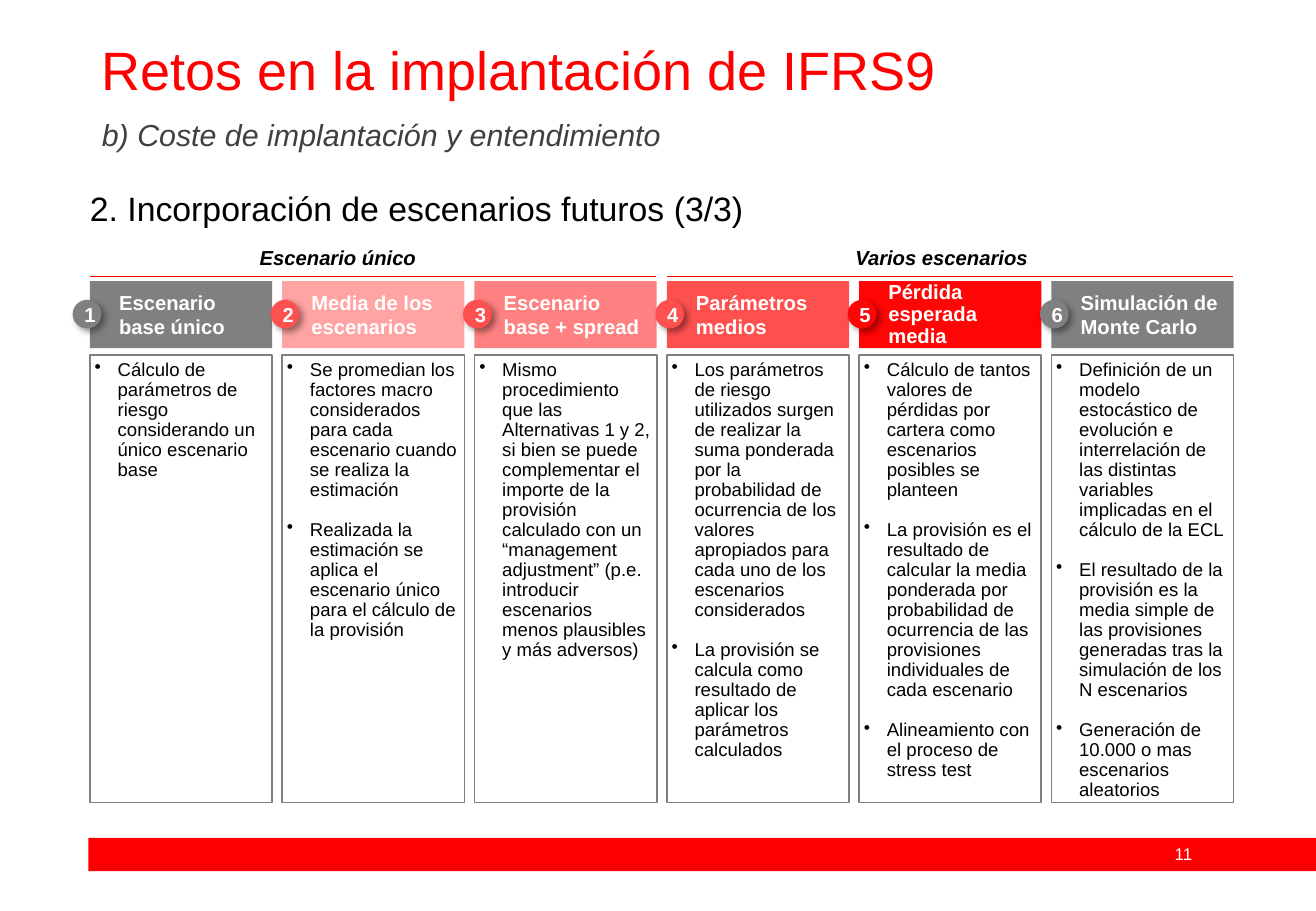
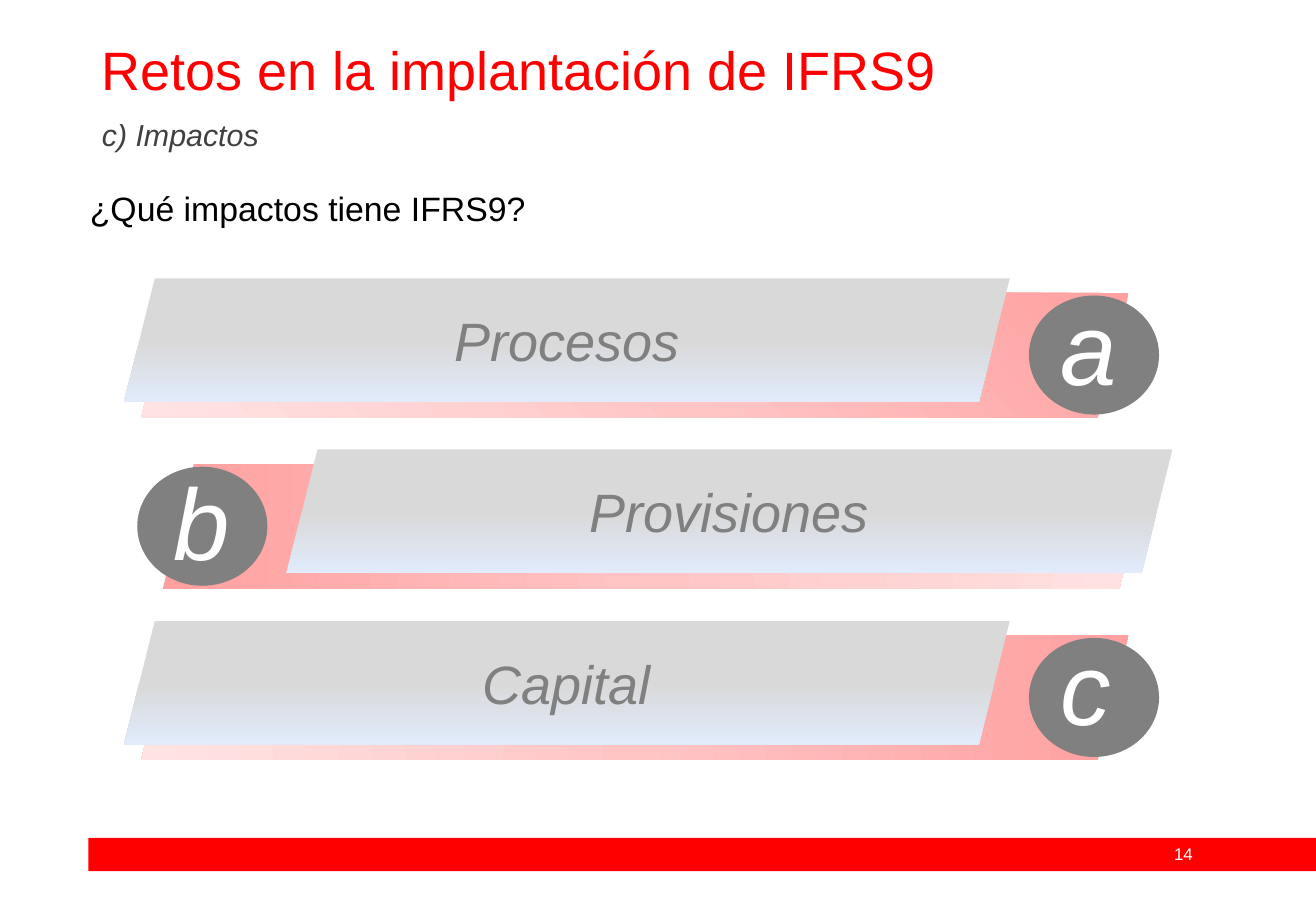
import collections

import pptx
import pptx.dml.color
import pptx.enum.shapes
import pptx.enum.text
import pptx.oxml
import pptx.oxml.ns
import pptx.util

Cm = pptx.util.Cm
Pt = pptx.util.Pt
SHAPE = pptx.enum.shapes.MSO_SHAPE
ALIGN = pptx.enum.text.PP_ALIGN
ANCHOR = pptx.enum.text.MSO_ANCHOR
Box = collections.namedtuple("Box", "left top width height")

COLOURS = {
    "red": "FF0000", "deep": "FF0505", "coral": "FF5050", "salmon": "FF8181",
    "rose": "FFA3A3", "grey": "808080", "charcoal": "404040",
    "black": "000000", "white": "FFFFFF",
    "ribbon_dark": "FFA0A0", "ribbon_mid": "FFC5C5", "ribbon_light": "FFE3E3",
    "silver": "D9D9D9", "ice": "E1EBFB",
}
RIBBON = ("ribbon_dark", "ribbon_mid", "ribbon_light")
PANEL = ("silver", "silver", "ice")

TIGHT = {"margin_left": Cm(0.1), "margin_right": Cm(0.1),
         "margin_top": Cm(0.1), "margin_bottom": Cm(0.1)}
MIDDLE = {"vertical_anchor": ANCHOR.MIDDLE}
CENTRED = {"alignment": ALIGN.CENTER}
STYLES = {
    "title": {"colour": "red", "font": {"size": Pt(32)}, "para": {"line_spacing": 0.9}},
    "subtitle": {"colour": "charcoal", "font": {"size": Pt(18), "italic": True},
                 "para": {"line_spacing": 0.9}},
    "heading": {"colour": "black", "font": {"size": Pt(20)}},
    "number": {"colour": "white", "font": {"size": Pt(10)}, "para": CENTRED},
    "group": {"colour": "black", "font": {"size": Pt(12), "bold": True, "italic": True},
              "para": CENTRED, "frame": {"margin_right": 0}},
    "header": {"colour": "white", "font": {"size": Pt(12), "bold": True},
               "frame": {**TIGHT, **MIDDLE}, "indent": (0.51, 0)},
    "badge": {"colour": "white", "font": {"size": Pt(12), "bold": True}, "para": CENTRED,
              "frame": {**MIDDLE, "margin_left": Cm(0.13), "margin_right": 0,
                        "margin_top": 0, "margin_bottom": 0}},
    "body": {"colour": "black", "font": {"size": Pt(11)}, "frame": TIGHT,
             "para": {"line_spacing": 0.9, "space_after": Pt(11.9)},
             "indent": (0.48, -0.48), "bullet": "•"},
    "panel": {"colour": "grey", "font": {"size": Pt(32), "italic": True},
              "para": CENTRED, "frame": MIDDLE},
    "letter": {"colour": "white", "font": {"size": Pt(60), "italic": True}},
}
STYLES["dense_header"] = {**STYLES["header"], "para": {"line_spacing": 0.9}}

COLUMN_PITCH = 4.02
CARD_WIDTH = 3.81
CARDS = [
    ("grey", "grey", "header", ["Escenario", "base único"],
     ["Cálculo de parámetros de riesgo considerando un único escenario base"]),
    ("rose", "coral", "header", ["Media de los escenarios"],
     ["Se promedian los factores macro considerados para cada escenario cuando se "
      "realiza la estimación",
      "Realizada la estimación se aplica el escenario único para el cálculo de la "
      "provisión"]),
    ("salmon", "coral", "header", ["Escenario", "base + spread"],
     ["Mismo procedimiento que las Alternativas 1 y 2, si bien se puede complementar "
      "el importe de la provisión calculado con un “management adjustment” (p.e. "
      "introducir escenarios menos plausibles y más adversos)"]),
    ("coral", "coral", "header", ["Parámetros medios"],
     ["Los parámetros de riesgo utilizados surgen de realizar la suma ponderada por la "
      "probabilidad de ocurrencia de los valores apropiados para cada uno de los "
      "escenarios considerados",
      "La provisión se calcula como resultado de aplicar los parámetros calculados"]),
    ("deep", "deep", "dense_header", ["Pérdida esperada media"],
     ["Cálculo de tantos valores de pérdidas por cartera como escenarios posibles se "
      "planteen",
      "La provisión es el resultado de calcular la media ponderada por probabilidad de "
      "ocurrencia de las provisiones individuales de cada escenario",
      "Alineamiento con el proceso de stress test"]),
    ("grey", "grey", "header", ["Simulación de Monte Carlo"],
     ["Definición de un modelo estocástico de evolución e interrelación de las distintas "
      "variables implicadas en el cálculo de la ECL",
      "El resultado de la provisión es la media simple de las provisiones generadas tras "
      "la simulación de los N escenarios",
      "Generación de 10.000 o mas escenarios aleatorios"]),
]


def rgb(name):
    """Return the named colour."""
    return pptx.dml.color.RGBColor.from_string(COLOURS[name])


def apply(target, values):
    """Set each attribute of the target from a dict."""
    for name, value in values.items():
        setattr(target, name, value)


def lengths(box):
    """Turn a box in centimetres into four lengths."""
    return [Cm(value) for value in box]


def xml(text):
    """Parse a DrawingML fragment."""
    return pptx.oxml.parse_xml(text.replace(" ", f" {pptx.oxml.ns.nsdecls('a')} ", 1))


def write(shape, lines, style_name):
    """Fill a shape with paragraphs in one style."""
    style = STYLES[style_name]
    frame = shape.text_frame
    apply(frame, {"word_wrap": True, "vertical_anchor": ANCHOR.TOP, **style.get("frame", {})})
    for index, line in enumerate(lines):
        para = frame.paragraphs[0] if index == 0 else frame.add_paragraph()
        apply(para, {"alignment": ALIGN.LEFT, **style.get("para", {})})
        properties = para._p.get_or_add_pPr()
        if "indent" in style:
            for key, value in zip(("marL", "indent"), style["indent"]):
                properties.set(key, str(int(Cm(value))))
        if "bullet" in style:
            properties.append(xml(f'<a:buChar char="{style["bullet"]}"/>'))
        span = para.add_run()
        span.text = line
        apply(span.font, {"name": "Arial", **style["font"]})
        span.font.color.rgb = rgb(style["colour"])


def add_text(shapes, box, text, style_name):
    """Add a text box with one paragraph."""
    write(shapes.add_textbox(*lengths(box)), [text], style_name)


def add_block(shapes, kind, box, fill=None, line=None):
    """Add a preset shape with a flat fill and an optional outline."""
    shape = shapes.add_shape(kind, *lengths(box))
    shape.shadow.inherit = False
    if fill:
        shape.fill.solid()
        shape.fill.fore_color.rgb = rgb(fill)
    if line:
        shape.line.color.rgb = rgb(line)
        shape.line.width = Pt(1)
    else:
        shape.line.fill.background()
    return shape


def add_gradient_block(shapes, box, colours, angle):
    """Add a parallelogram with an evenly stepped gradient."""
    shape = add_block(shapes, SHAPE.PARALLELOGRAM, box)
    shape.fill.background()
    step = 100000 // (len(colours) - 1)
    stops = "".join(f'<a:gs pos="{index * step}"><a:srgbClr val="{COLOURS[name]}"/></a:gs>'
                    for index, name in enumerate(colours))
    gradient = xml(f'<a:gradFill rotWithShape="1"><a:gsLst>{stops}</a:gsLst>'
                   f'<a:lin ang="{angle * 60000}" scaled="0"/></a:gradFill>')
    properties = shape._element.spPr
    properties.replace(properties.find(pptx.oxml.ns.qn("a:noFill")), gradient)
    return shape


def add_shadow(shape):
    """Give a shape a soft shadow to the lower right."""
    effects = shape._element.spPr.find(pptx.oxml.ns.qn("a:effectLst"))
    effects.append(xml(
        f'<a:outerShdw blurRad="{Pt(4)}" dist="{Pt(3)}" dir="2700000" algn="tl" '
        f'rotWithShape="0"><a:srgbClr val="{COLOURS["black"]}"><a:alpha val="40000"/>'
        '</a:srgbClr></a:outerShdw>'))


def add_page(deck, subtitle, heading, number):
    """Add a page with its titles and footer band."""
    page = deck.slides.add_slide(deck.slide_layouts[6])
    add_block(page.shapes, SHAPE.RECTANGLE, Box(1.85, 17.52, 25.66, 0.7), "red")
    for box, text, style_name in (
            (Box(23.98, 17.52, 1.52, 0.69), number, "number"),
            (Box(1.88, 0.79, 23.72, 1.45), "Retos en la implantación de IFRS9", "title"),
            (Box(1.88, 2.39, 23.72, 1.04), subtitle, "subtitle"),
            (Box(1.63, 3.81, 23.72, 1.12), heading, "heading")):
        add_text(page.shapes, box, text, style_name)
    return page


def add_group_label(page, box, text, label_shift):
    """Add a label above the rule that spans a group of cards."""
    add_text(page.shapes, Box(box.left + label_shift, box.top, 9.1, box.height),
             text, "group")
    bottom = box.top + box.height
    rule = page.shapes.add_connector(
        pptx.enum.shapes.MSO_CONNECTOR.STRAIGHT,
        *lengths((box.left, bottom, box.left + box.width, bottom)))
    rule.line.color.rgb = rgb("red")
    rule.line.width = Pt(0.5)
    rule._element.spPr.append(xml("<a:effectLst />"))


def add_card(page, box, number, card):
    """Add a numbered header with its bulleted body."""
    fill, badge_fill, header_style, header, body = card
    block = add_block(page.shapes, SHAPE.RECTANGLE, box._replace(height=1.4), fill)
    write(block, header, header_style)
    block = add_block(page.shapes, SHAPE.RECTANGLE,
                      box._replace(top=box.top + 1.55, height=box.height - 1.55),
                      "white", "grey")
    write(block, body, "body")
    overhang = 0.36 if number == 1 else 0.24
    badge = add_block(page.shapes, SHAPE.OVAL,
                      Box(box.left - overhang, box.top + 0.39, 0.6, 0.6), badge_fill)
    add_shadow(badge)
    write(badge, [str(number)], "badge")


def add_ribbon(page, box, text, letter, angle, lefts, letter_shift):
    """Add a group of ribbon, text panel and lettered disc."""
    shapes = page.shapes.add_group_shape().shapes
    ribbon, panel, disc, glyph = (box.left + left for left in lefts)
    add_gradient_block(shapes, Box(ribbon, box.top + 0.3, 20.65, 2.62), RIBBON, angle)
    block = add_gradient_block(shapes, Box(panel, box.top, 18.52, box.height), PANEL, 90)
    write(block, [text], "panel")
    add_block(shapes, SHAPE.OVAL, Box(disc, box.top + 0.36, 2.72, 2.49), "grey")
    add_text(shapes, Box(glyph, box.top + letter_shift, 1.98, 2.82), letter, "letter")


def build_scenarios(deck):
    """Build the page that compares six scenario methods."""
    page = add_page(deck, "b) Coste de implantación y entendimiento",
                    "2. Incorporación de escenarios futuros (3/3)", "11")
    area = Box(1.88, 5.88, 23.91, 10.9)
    half = 3 * COLUMN_PITCH
    for index, (text, shift) in enumerate((("Escenario único", 0.51),
                                           ("Varios escenarios", 1.07))):
        box = Box(area.left + index * half, 5.0, half - 0.22, 0.79)
        add_group_label(page, box, text, shift)
    for index, card in enumerate(CARDS):
        box = area._replace(left=area.left + index * COLUMN_PITCH, width=CARD_WIDTH)
        add_card(page, box, index + 1, card)


def build_impacts(deck):
    """Build the page that lists three impacts."""
    page = add_page(deck, "c) Impactos", "¿Qué impactos tiene IFRS9?", "14")
    disc_right = (0.36, 0, 18.92, 19.33)
    disc_left = (0.81, 3.4, 0.28, 0.79)
    rows = (("Procesos", "a", 135, disc_right, 0),
            ("Provisiones", "b", 0, disc_left, 0.08),
            ("Capital", "c", 180, disc_right, -0.06))
    for index, row in enumerate(rows):
        add_ribbon(page, Box(2.59, 5.82 + index * 3.58, 21.92, 2.59), *row)


def main():
    """Build and save the deck."""
    deck = pptx.Presentation()
    deck.slide_width, deck.slide_height = Cm(27.51), Cm(19.05)
    build_scenarios(deck)
    build_impacts(deck)
    deck.save("out.pptx")


if __name__ == "__main__":
    main()
